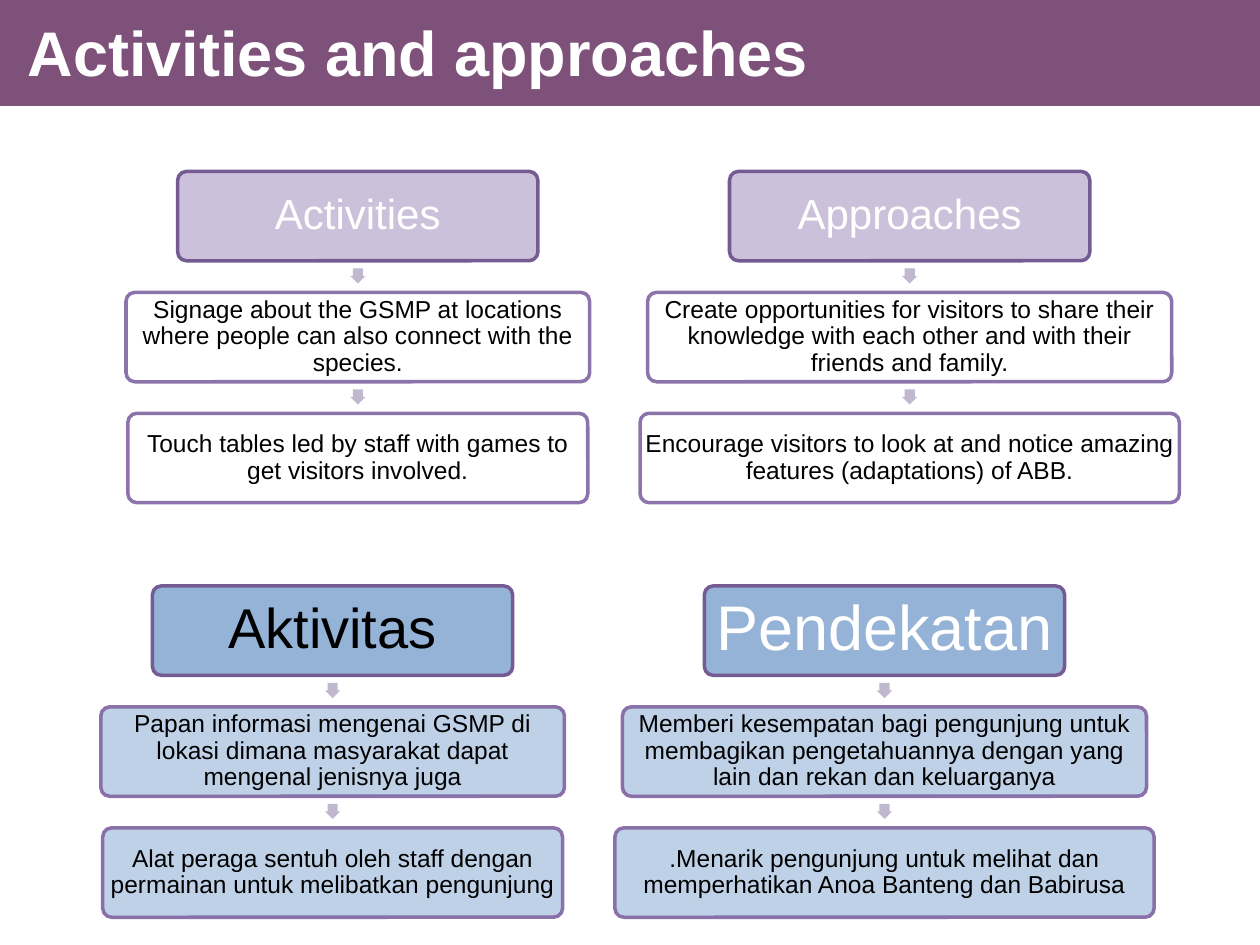
"""Build the slide of activities and approaches in English and Indonesian."""
from lxml import etree
from pptx import Presentation
from pptx.dml.color import RGBColor
from pptx.enum import shapes, text
from pptx.oxml import ns
from pptx.util import Inches, Pt


class Theme:
    font = "Arial"
    band, white, black = "7D5179", "FFFFFF", "000000"
    edge, rim, arrow = "745B93", "8064A2", "C0B8CE"
    lilac, blue, pale = "CCC1DA", "95B3D7", "B9CDE5"
    title, body = 36, 14


def draw(tree, kind, left, top, wide, high, fill, line=None, alpha=None):
    shape = tree.add_shape(kind, Inches(left), Inches(top), Inches(wide), Inches(high))
    shape.shadow.inherit = False
    shape.fill.solid()
    shape.fill.fore_color.rgb = RGBColor.from_string(fill)
    if line:
        shape.line.width = Pt(2)
        shape.line.color.rgb = RGBColor.from_string(line)
    else:
        shape.line.fill.background()
    if alpha:
        for color in shape._element.spPr.iter(ns.qn("a:srgbClr")):
            etree.SubElement(color, ns.qn("a:alpha"), val=str(alpha * 1000))
    return shape


def write(para, words, size, color, bold=False):
    run = para.add_run()
    run.text = words
    run.font.name = Theme.font
    run.font.size = Pt(size)
    run.font.bold = bold
    run.font.color.rgb = RGBColor.from_string(color)


deck = Presentation()
deck.slide_width, deck.slide_height = Inches(10), Inches(7.5)
slide = deck.slides.add_slide(deck.slide_layouts[5])

kinds = shapes.MSO_SHAPE
band = draw(slide.shapes, kinds.RECTANGLE, 0, 0, 10, 0.84, Theme.band)
title = slide.shapes.title
title._element.addprevious(band._element)
title.left, title.top = Inches(0.12), Inches(0.05)
title.width, title.height = Inches(7.72), Inches(0.71)
title.text_frame.vertical_anchor = text.MSO_ANCHOR.MIDDLE
para = title.text_frame.paragraphs[0]
para.alignment = text.PP_ALIGN.LEFT
write(para, "Activities and approaches", Theme.title, Theme.white, True)

high, step = 0.71, 0.96
tip = 0.12
groups = [
    (1.36, Theme.lilac, Theme.white, [
        (2.84, 24, Theme.white, (2.86, 3.68, 3.65), [
            "Activities",
            "Signage about the GSMP at locations where people can also connect with the species.",
            "Touch tables led by staff with games to get visitors involved."]),
        (7.22, 24, Theme.white, (2.86, 4.16, 4.28), [
            "Approaches",
            "Create opportunities for visitors to share their knowledge with each other "
            "and with their friends and family.",
            "Encourage visitors to look at and notice amazing features (adaptations) of ABB."])]),
    (4.65, Theme.blue, Theme.pale, [
        (2.64, 32, Theme.black, (2.86, 3.68, 3.65), [
            "Aktivitas",
            "Papan informasi mengenai GSMP di lokasi dimana masyarakat dapat "
            "mengenal jenisnya juga",
            "Alat peraga sentuh oleh staff dengan permainan untuk melibatkan pengunjung"]),
        (7.02, 36, Theme.white, (2.86, 4.16, 4.28), [
            "Pendekatan",
            "Memberi kesempatan bagi pengunjung untuk membagikan pengetahuannya "
            "dengan yang lain dan rekan dan keluarganya",
            ".Menarik pengunjung untuk melihat dan memperhatikan Anoa Banteng dan Babirusa"])]),
]

for start, head, fill, chains in groups:
    group = slide.shapes.add_group_shape().shapes
    for mid, size, color, widths, words in chains:
        for row, (wide, line) in enumerate(zip(widths, words)):
            top = start + row * step
            look = (fill, Theme.rim, 90) if row else (head, Theme.edge)
            if row:
                arrow = draw(group, kinds.RIGHT_ARROW, mid - tip / 2, top - 0.19,
                             tip, tip, Theme.arrow)
                arrow.rotation = 90
                arrow.adjustments[0] = 0.67
            box = draw(group, kinds.ROUNDED_RECTANGLE, mid - wide / 2, top, wide, high, *look)
            box.adjustments[0] = 0.1
            frame = box.text_frame
            frame.word_wrap = True
            frame.vertical_anchor = text.MSO_ANCHOR.MIDDLE
            pad = Inches(0.02 if row else 0.05)
            frame.margin_left = frame.margin_right = pad
            frame.margin_top = frame.margin_bottom = pad
            para = frame.paragraphs[0]
            para.alignment = text.PP_ALIGN.CENTER
            para.line_spacing = 0.9
            write(para, line, Theme.body if row else size, Theme.black if row else color)

deck.save("out.pptx")
